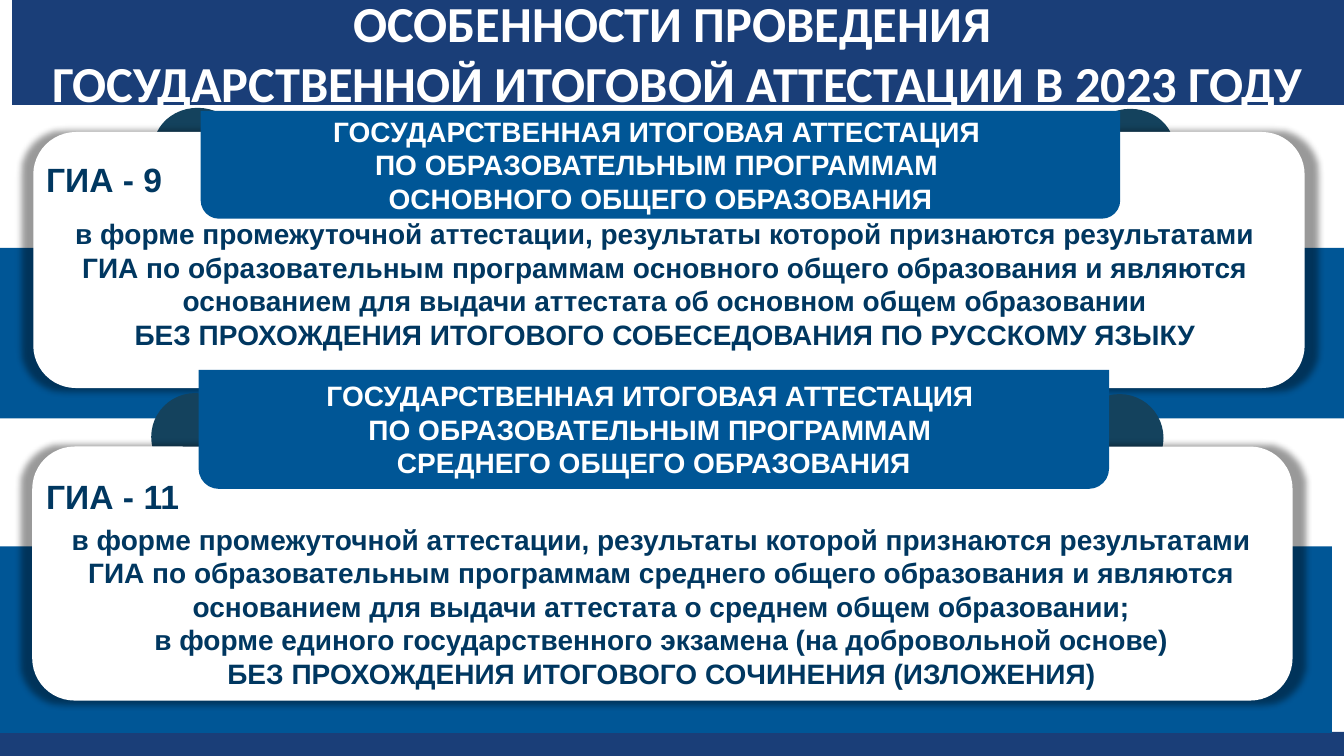
from lxml import etree
from pptx import Presentation
from pptx.dml.color import RGBColor
from pptx.enum.shapes import MSO_SHAPE
from pptx.enum.text import MSO_ANCHOR, PP_ALIGN
from pptx.oxml.ns import qn
from pptx.util import Inches, Pt

RECT = MSO_SHAPE.RECTANGLE
OVAL = MSO_SHAPE.OVAL
ROUNDED = MSO_SHAPE.ROUNDED_RECTANGLE
BOTTOM_ROUNDED = MSO_SHAPE.ROUND_2_SAME_RECTANGLE
MIDDLE = MSO_ANCHOR.MIDDLE
CENTER = PP_ALIGN.CENTER
LEFT = PP_ALIGN.LEFT

WHITE = RGBColor(0xFF, 0xFF, 0xFF)
NAVY = RGBColor(0x1A, 0x3E, 0x78)
BLUE = RGBColor(0x00, 0x56, 0x96)
TEAL = RGBColor(0x14, 0x42, 0x5D)
INK = RGBColor(0x00, 0x37, 0x60)

prs = Presentation()
prs.slide_width, prs.slide_height = Inches(13.33), Inches(7.5)
slide = prs.slides.add_slide(prs.slide_layouts[6])


def add_block(kind, box, color):
    block = slide.shapes.add_shape(kind, *[Inches(v) for v in box])
    block.shadow.inherit = False
    block.fill.solid()
    block.fill.fore_color.rgb = color
    block.line.fill.background()
    return block


def write(shape, text, size, color, align=CENTER, font="Arial"):
    frame = shape.text_frame
    frame.word_wrap = True
    frame.text = text
    for paragraph in frame.paragraphs:
        paragraph.alignment = align
        for run in paragraph.runs:
            run.font.size = Pt(size)
            run.font.name = font
            run.font.bold = True
            run.font.color.rgb = color


# Footer bar and title bar
add_block(RECT, (0, 7.26, 13.33, 0.24), NAVY)
title = add_block(RECT, (0.12, 0, 13.21, 1.04), NAVY)
title.text_frame.vertical_anchor = MIDDLE
write(title, "ОСОБЕННОСТИ ПРОВЕДЕНИЯ \n"
      "ГОСУДАРСТВЕННОЙ ИТОГОВОЙ АТТЕСТАЦИИ В 2023 ГОДУ", 36, WHITE, font="Calibri")

# The two exam sections
sections = [
    {
        "stripe": (0, 2.46, 13.33, 1.69),
        "ears": [(1.52, 1.07, 0.88, 0.8), (10.77, 1.08, 0.88, 0.8)],
        "card": (0.33, 1.31, 12.61, 2.54),
        "tab": (1.99, 1.1, 9.12, 1.07),
        "level": "ОСНОВНОГО",
        "body": (0.51, 2.1, 12.17, 1.45),
        "terms": "в форме промежуточной аттестации, результаты которой признаются "
                 "результатами ГИА по образовательным программам основного общего "
                 "образования и являются основанием для выдачи аттестата об основном "
                 "общем образовании\n"
                 "БЕЗ ПРОХОЖДЕНИЯ ИТОГОВОГО СОБЕСЕДОВАНИЯ ПО РУССКОМУ ЯЗЫКУ",
        "label": (0.36, 1.53, 1.4, 0.5),
        "exam": "ГИА - 9",
    },
    {
        "stripe": (0, 5.42, 13.21, 1.85),
        "ears": [(1.5, 3.9, 0.87, 0.87), (10.67, 3.91, 0.87, 0.87)],
        "card": (0.32, 4.43, 12.5, 2.52),
        "tab": (1.97, 3.67, 9.03, 1.18),
        "level": "СРЕДНЕГО",
        "body": (0.48, 5.13, 12.16, 1.78),
        "terms": "в форме промежуточной аттестации, результаты которой признаются "
                 "результатами ГИА по образовательным программам среднего общего "
                 "образования и являются основанием для выдачи аттестата о среднем "
                 "общем образовании;\n"
                 "в форме единого государственного экзамена (на добровольной основе)\n"
                 "БЕЗ ПРОХОЖДЕНИЯ ИТОГОВОГО СОЧИНЕНИЯ (ИЗЛОЖЕНИЯ)",
        "label": (0.36, 4.67, 1.69, 0.5),
        "exam": "ГИА - 11",
    },
]

for section in sections:
    add_block(RECT, section["stripe"], BLUE)
    for ear in section["ears"]:
        add_block(OVAL, ear, TEAL)

    # White card with a soft shadow slightly larger than itself
    card = add_block(ROUNDED, section["card"], WHITE)
    effects = card.element.spPr.find(qn("a:effectLst"))
    shadow = etree.SubElement(effects, qn("a:outerShdw"), blurRad=str(Pt(5)),
                              sx="102000", sy="102000", algn="ctr", rotWithShape="0")
    shade = etree.SubElement(shadow, qn("a:srgbClr"), val="000000")
    etree.SubElement(shade, qn("a:alpha"), val="40000")

    # Heading tab, rounded at the bottom only
    tab = add_block(BOTTOM_ROUNDED, section["tab"], BLUE)
    tab.adjustments[0], tab.adjustments[1] = 0, 0.17
    tab.text_frame.vertical_anchor = MIDDLE
    tab.text_frame.margin_top = Inches(0.1)
    write(tab, "ГОСУДАРСТВЕННАЯ ИТОГОВАЯ АТТЕСТАЦИЯ \v"
          "ПО ОБРАЗОВАТЕЛЬНЫМ ПРОГРАММАМ \v"
          f"{section['level']} ОБЩЕГО ОБРАЗОВАНИЯ", 20, WHITE)

    # Terms and exam label
    body = slide.shapes.add_textbox(*[Inches(v) for v in section["body"]])
    write(body, section["terms"], 20, INK)
    label = slide.shapes.add_textbox(*[Inches(v) for v in section["label"]])
    write(label, section["exam"], 24, INK, LEFT)

prs.save("out.pptx")
